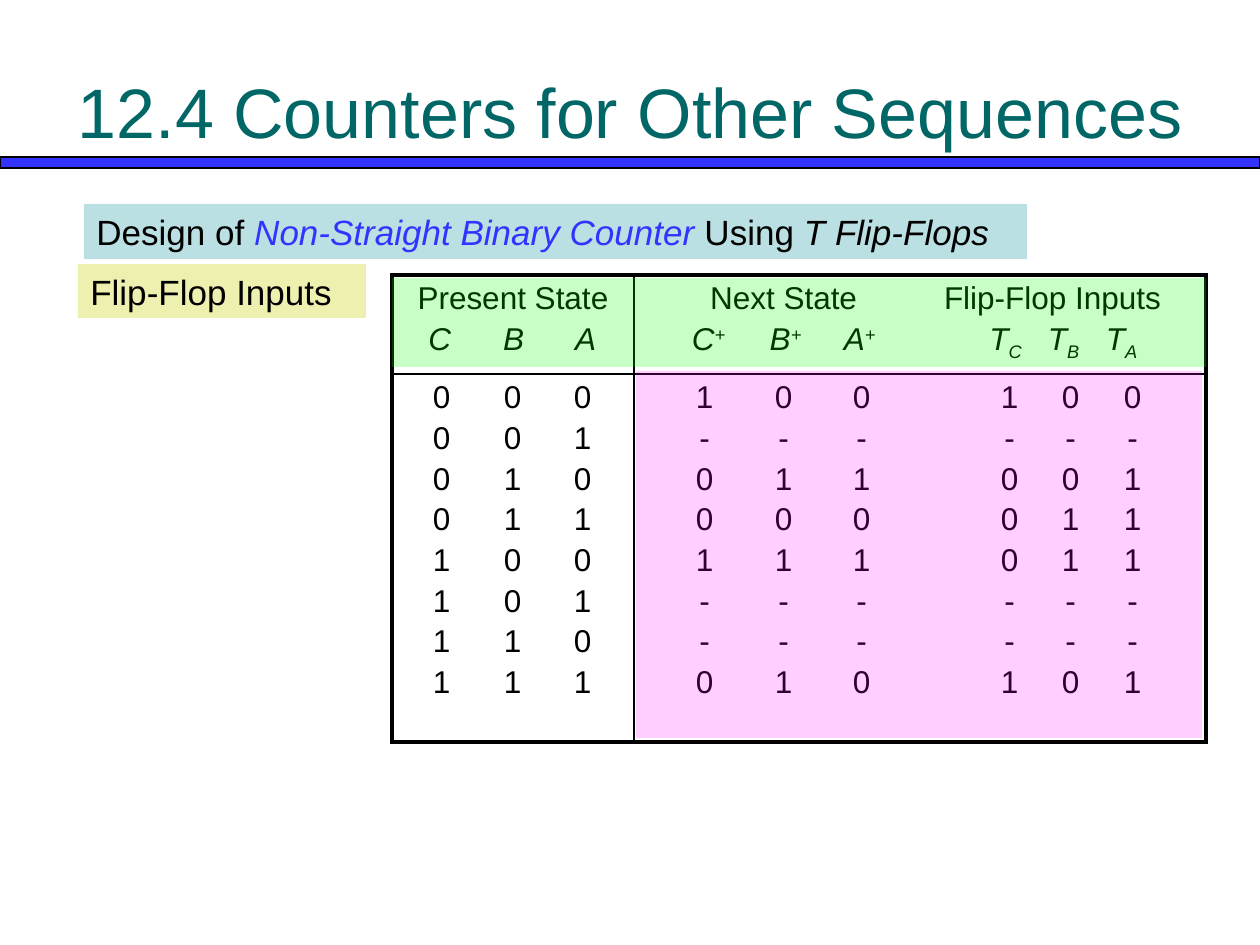
from dataclasses import dataclass

from lxml.etree import SubElement
from pptx import Presentation
from pptx.dml.color import RGBColor
from pptx.enum.shapes import MSO_SHAPE
from pptx.enum.text import MSO_ANCHOR, PP_ALIGN
from pptx.oxml.ns import qn
from pptx.util import Pt

EMU_PER_PX = 914400 / 126


@dataclass(frozen=True)
class Theme:
    font: str = "Arial"
    title_size: int = 40
    label_size: int = 20
    table_size: int = 18
    row_gap: float = 3.1
    outer_line: float = 2.25
    inner_line: float = 1
    ink: str = "000000"
    title: str = "006666"
    accent: str = "3333FF"
    topic: str = "BBE0E3"
    step: str = "EDF0AE"
    header_tint: str = "00FF00"
    result_tint: str = "FF00FF"


THEME = Theme()

PRESENT_STOPS = (37, 108, 178)
PRESENT_HEAD_STOPS = (35, 109, 181)
RESULT_STOPS = (58, 137, 215, 363, 424, 486)
RESULT_HEAD_STOPS = (62, 139, 213, 359, 417, 475)
GROUP_STOPS = (137, 406)

STATES = [f"{number:03b}" for number in range(8)]
RESULTS = ["100100", "------", "011001", "000011",
           "111011", "------", "------", "010101"]


def px(length):
    return round(length * EMU_PER_PX)


def box(left, top, width, height):
    return [px(length) for length in (left, top, width, height)]


def add_run(paragraph, text, size, color=THEME.ink, italic=False, baseline=0):
    run = paragraph.add_run()
    run.text = text
    run.font.name = THEME.font
    run.font.size = Pt(size)
    run.font.italic = italic
    run.font.color.rgb = RGBColor.from_string(color)
    if baseline:
        run.font._element.set("baseline", str(baseline * 1000))


def add_rectangle(slide, bounds, fill, opacity=100):
    shape = slide.shapes.add_shape(MSO_SHAPE.RECTANGLE, *box(*bounds))
    shape.shadow.inherit = False
    shape.fill.solid()
    shape.fill.fore_color.rgb = RGBColor.from_string(fill)
    shape.line.fill.background()
    if opacity < 100:
        color = shape.fill._xPr.find(qn("a:solidFill"))[0]
        SubElement(color, qn("a:alpha"), val=str(opacity * 1000))
    return shape


def add_rule(slide):
    rule = add_rectangle(slide, (0, 157, 1260, 11), THEME.accent)
    rule.line.color.rgb = RGBColor.from_string(THEME.ink)
    rule.line.width = Pt(0.75)


def set_title(slide, text):
    title = slide.shapes.title
    title.left, title.top, title.width, title.height = box(63, 32, 1134, 158)
    title.text_frame.vertical_anchor = MSO_ANCHOR.MIDDLE
    paragraph = title.text_frame.paragraphs[0]
    paragraph.alignment = PP_ALIGN.CENTER
    add_run(paragraph, text, THEME.title_size, THEME.title)


def add_label(slide, bounds, fill, runs):
    frame = add_rectangle(slide, bounds, fill).text_frame
    frame.word_wrap = True
    frame.vertical_anchor = MSO_ANCHOR.TOP
    paragraph = frame.paragraphs[0]
    paragraph.alignment = PP_ALIGN.LEFT
    for text, color, italic in runs:
        add_run(paragraph, text, THEME.label_size, color, italic)


def set_tab_stops(paragraph, stops):
    tab_list = SubElement(paragraph._p.get_or_add_pPr(), qn("a:tabLst"))
    for stop in stops:
        SubElement(tab_list, qn("a:tab"), pos=str(px(stop)), algn="ctr")


def add_line(cell, index, entries, stops=(), italic=False):
    frame = cell.text_frame
    paragraph = frame.add_paragraph() if index else frame.paragraphs[0]
    paragraph.alignment = PP_ALIGN.LEFT if stops else PP_ALIGN.CENTER
    paragraph.space_before = Pt(THEME.row_gap)
    set_tab_stops(paragraph, stops)
    for text, mark, baseline in entries:
        lead = "\t" if stops else ""
        add_run(paragraph, lead + text, THEME.table_size, italic=italic)
        if mark:
            add_run(paragraph, mark, THEME.table_size, italic=italic, baseline=baseline)


def plain(texts):
    return [(text, "", 0) for text in texts]


def set_borders(cell, row, column):
    properties = cell._tc.get_or_add_tcPr()
    outer_sides = {"L": column == 0, "R": column == 1, "T": row == 0, "B": row == 1}
    for side, is_outer in outer_sides.items():
        width = THEME.outer_line if is_outer else THEME.inner_line
        line = SubElement(properties, qn(f"a:ln{side}"), w=str(Pt(width)))
        fill = SubElement(line, qn("a:solidFill"))
        SubElement(fill, qn("a:srgbClr"), val=THEME.ink)


def add_state_table(slide):
    table = slide.shapes.add_table(2, 2, *box(392, 275, 814, 467)).table
    table.first_row = False
    table.horz_banding = False
    for column, width in zip(table.columns, (242, 572)):
        column.width = px(width)
    for row, height in zip(table.rows, (99, 368)):
        row.height = px(height)
    for row in range(2):
        for column in range(2):
            cell = table.cell(row, column)
            set_borders(cell, row, column)
            cell.fill.background()

    present_head, result_head = table.cell(0, 0), table.cell(0, 1)
    add_line(present_head, 0, plain(["Present State"]))
    add_line(present_head, 1, plain("CBA"), PRESENT_HEAD_STOPS, True)
    add_line(result_head, 0, plain(["Next State", "Flip-Flop Inputs"]), GROUP_STOPS)
    next_states = [(name, "+", 30) for name in "CBA"]
    inputs = [("T", name, -25) for name in "CBA"]
    add_line(result_head, 1, next_states + inputs, RESULT_HEAD_STOPS, True)

    for index, (state, result) in enumerate(zip(STATES, RESULTS)):
        add_line(table.cell(1, 0), index, plain(state), PRESENT_STOPS)
        add_line(table.cell(1, 1), index, plain(result), RESULT_STOPS)


def main():
    presentation = Presentation()
    presentation.slide_width = px(1260)
    presentation.slide_height = px(945)
    slide = presentation.slides.add_slide(presentation.slide_layouts[5])

    add_rule(slide)
    set_title(slide, "12.4 Counters for Other Sequences")
    add_label(slide, (84, 204, 943, 55), THEME.topic, [
        ("Design of ", THEME.ink, False),
        ("Non-Straight Binary Counter", THEME.accent, True),
        (" Using ", THEME.ink, False),
        ("T Flip-Flops", THEME.ink, True),
    ])
    add_label(slide, (78, 264, 288, 54), THEME.step,
              [("Flip-Flop Inputs", THEME.ink, False)])
    add_state_table(slide)
    add_rectangle(slide, (392, 278, 814, 89), THEME.header_tint, 22)
    add_rectangle(slide, (636, 371, 566, 367), THEME.result_tint, 19)

    presentation.save("out.pptx")


if __name__ == "__main__":
    main()
